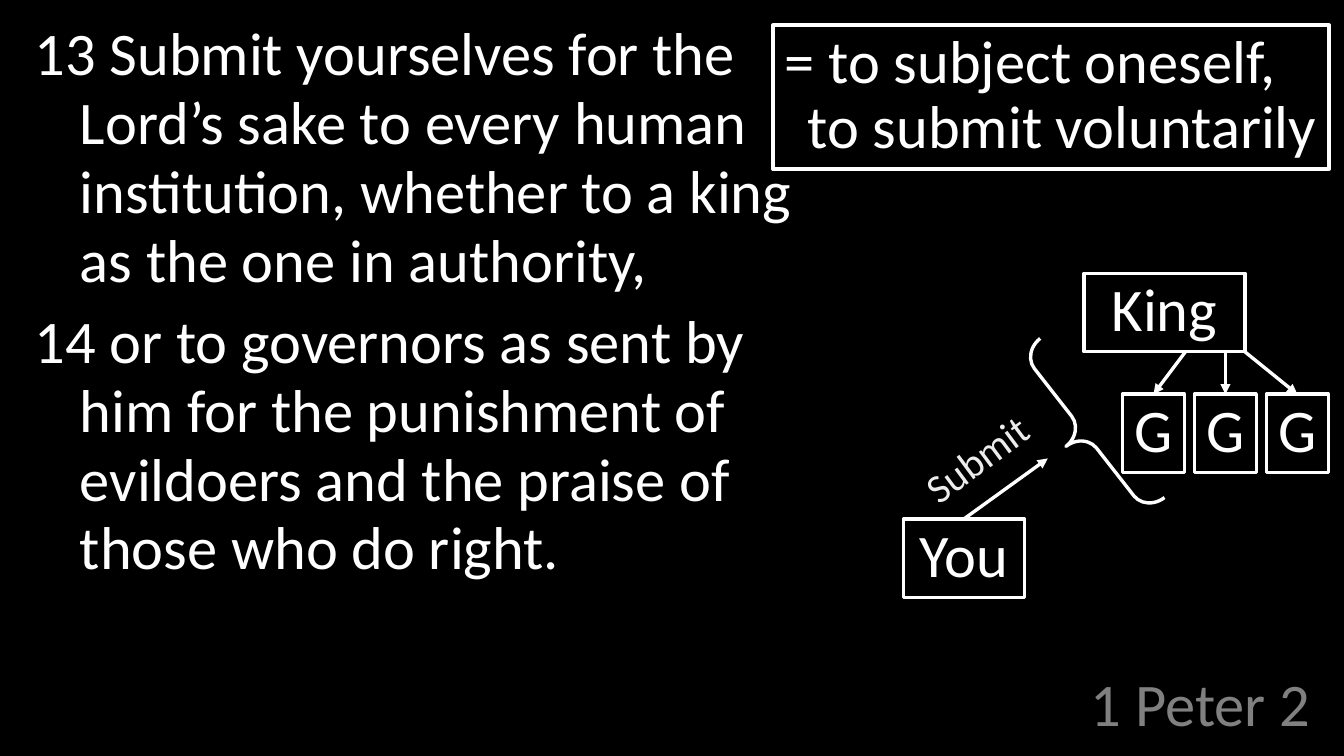
from lxml.etree import SubElement
from pptx import Presentation
from pptx.dml.color import RGBColor as RGB
from pptx.enum.shapes import MSO_CONNECTOR as LINE, MSO_SHAPE as KIND
from pptx.enum.text import MSO_ANCHOR as ANCHOR, PP_ALIGN as ALIGN
from pptx.oxml.ns import qn
from pptx.util import Cm, Pt

COLORS = {"back": "000000", "ink": "FFFFFF", "pale": "ECECEC", "gray": "808080"}
FONT = "Calibri"
BOX_H = 1.65
G_TOP, G_W, G_STEP = 8.28, 1.3, 1.51


def color(name):
    return RGB.from_string(COLORS[name])


def write(shape, *paras, size=36, ink="ink", align=ALIGN.LEFT, space=1.0,
          before=0, hang=0, anchor=ANCHOR.TOP, wrap=False):
    """Fill a shape with paragraphs; a vertical tab breaks a line."""
    frame = shape.text_frame
    frame.word_wrap = wrap
    frame.vertical_anchor = anchor
    frame.text = "\n".join(paras)
    for para in frame.paragraphs:
        para.alignment = align
        para.line_spacing = space
        para.space_before = Pt(before)
        if hang:
            props = para._p.get_or_add_pPr()
            props.set("marL", str(Cm(hang)))
            props.set("indent", str(-Cm(hang)))
        for run in para.runs:
            run.font.name = FONT
            run.font.size = Pt(size)
            run.font.color.rgb = color(ink)


def label(slide, place, *paras, turn=0, **style):
    text = slide.shapes.add_textbox(*map(Cm, place))
    text.rotation = turn
    write(text, *paras, **style)


def outline(shape):
    shape.line.color.rgb = color("ink")
    shape.line.width = Pt(2)


def box(slide, place, text, align=ALIGN.CENTER):
    shape = slide.shapes.add_shape(KIND.ROUNDED_RECTANGLE, *map(Cm, place))
    shape.adjustments[0] = 0
    shape.shadow.inherit = False
    shape.fill.solid()
    shape.fill.fore_color.rgb = color("back")
    outline(shape)
    write(shape, text, align=align, space=0.9, hang=0.48)
    return shape


def arrow(slide, start, end, source=None, target=None):
    """Draw an arrow; source leaves and target is met at its top middle."""
    line = slide.shapes.add_connector(LINE.STRAIGHT, *map(Cm, start + end))
    if source is not None:
        line.begin_connect(source, 0)
    if target is not None:
        line.end_connect(target, 0)
    outline(line)
    SubElement(line.line._get_or_add_ln(), qn("a:tailEnd"), type="triangle")
    SubElement(line._element.spPr, qn("a:effectLst"))


def brace(slide, place, turn):
    shape = slide.shapes.add_shape(KIND.LEFT_BRACE, *map(Cm, place))
    shape.adjustments[0] = 0.438
    shape.rotation = turn
    shape.shadow.inherit = False
    shape.fill.background()
    outline(shape)


def main():
    deck = Presentation()
    deck.slide_width, deck.slide_height = Cm(28.22), Cm(15.88)
    slide = deck.slides.add_slide(deck.slide_layouts[6])
    slide.background.fill.solid()
    slide.background.fill.fore_color.rgb = color("back")

    # Title and verses
    label(slide, (17.93, 14.12, 9.83, 1.5), "1 Peter 2", ink="gray",
          align=ALIGN.RIGHT, space=0.8, anchor=ANCHOR.BOTTOM, wrap=True)
    label(slide, (0.48, 0.3, 17.22, 13.44),
          "13 Submit yourselves for the Lord’s sake to every human institution, "
          "whether to a king as the one in authority,",
          "14 or to governors as sent by him for the punishment of evildoers "
          "and the praise of those who do right.",
          space=0.95, before=7.2, hang=0.95, wrap=True)

    # King and his governors
    you = box(slide, (18.97, 10.9, 2.54, BOX_H), "You")
    box(slide, (22.76, 5.74, 3.38, BOX_H), "King")
    for i, start in enumerate((24.89, 25.73, 26.14)):
        left = 23.57 + i * G_STEP
        gov = box(slide, (left, G_TOP, G_W, BOX_H), "G")
        arrow(slide, (start, 7.39), (left + G_W / 2, G_TOP), target=gov)

    # Submission to all of them
    arrow(slide, (20.24, 10.9), (22, 9.63), source=you)
    brace(slide, (22.28, 6.96, 0.97, 4.24), 322)
    label(slide, (18.49, 8.99, 4.01, 1.27), "Submit", turn=323.3,
          size=24, ink="pale", align=ALIGN.CENTER)

    # Meaning of the word
    box(slide, (16.23, 0.53, 11.68, 3.02),
        "= to subject oneself,\vto submit voluntarily", align=ALIGN.LEFT)

    deck.save("out.pptx")


if __name__ == "__main__":
    main()
